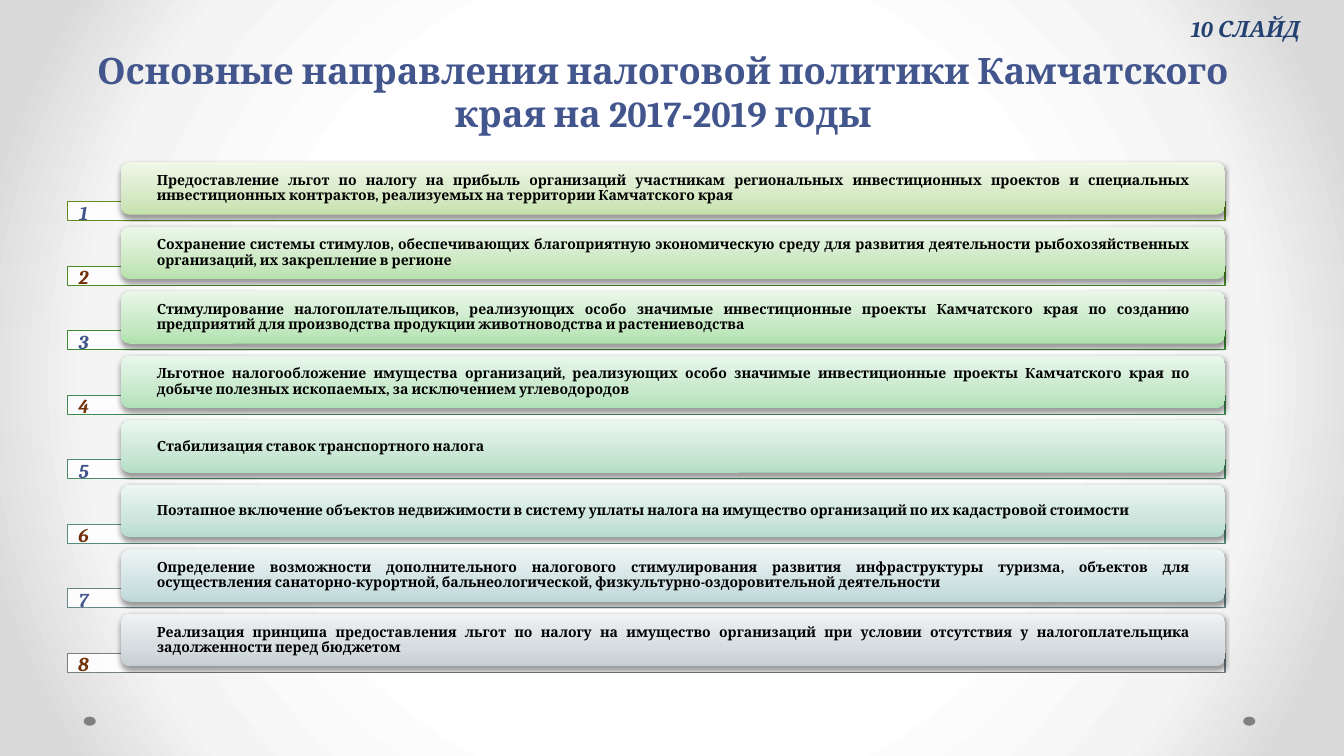
import pptx
import pptx.util
import pptx.dml.color
import pptx.oxml
import pptx.oxml.ns
from pptx.enum.shapes import MSO_SHAPE
from pptx.enum.text import MSO_ANCHOR, PP_ALIGN

FONT = "Cambria"
BLUE, BROWN, NAVY = "42568D", "723008", "234271"
WIDTH, HEIGHT = 13.33, 7.5
ROW_TOP, ROW_PITCH = 1.61, 0.64

# Wording, outline of the bar, gradient of the box from bottom to top
DIRECTIONS = [
    ("Предоставление льгот по налогу на прибыль организаций участникам региональных "
     "инвестиционных проектов и специальных инвестиционных контрактов, реализуемых "
     "на территории Камчатского края",
     "63891F", ("C5E1AB", "D6E9C5", "EFF7E9")),
    ("Сохранение системы стимулов, обеспечивающих благоприятную экономическую среду "
     "для развития деятельности рыбохозяйственных организаций, их закрепление в регионе",
     "4C8B28", ("B7E2AC", "CDE9C5", "ECF7E9")),
    ("Стимулирование налогоплательщиков, реализующих особо значимые инвестиционные "
     "проекты Камчатского края по созданию предприятий для производства продукции "
     "животноводства и растениеводства",
     "3A8D33", ("AFE2AD", "C8E9C6", "E9F7E9")),
    ("Льготное налогообложение имущества организаций, реализующих особо значимые "
     "инвестиционные проекты Камчатского края по добыче полезных ископаемых, "
     "за исключением углеводородов",
     "3E8D4E", ("AFE1B6", "C8E9CC", "E9F7EB")),
    ("Стабилизация ставок транспортного налога",
     "4A8C6A", ("B3DFC4", "CAE7D5", "EAF7EF")),
    ("Поэтапное включение объектов недвижимости в систему уплаты налога на имущество "
     "организаций по их кадастровой стоимости",
     "588B7E", ("B7DCD1", "CDE5DE", "ECF6F3")),
    ("Определение возможности дополнительного налогового стимулирования развития "
     "инфраструктуры туризма, объектов для осуществления санаторно-курортной, "
     "бальнеологической, физкультурно-оздоровительной деятельности",
     "668788", ("BED7D8", "D1E2E3", "EDF4F4")),
    ("Реализация принципа предоставления льгот по налогу на имущество организаций "
     "при условии отсутствия у налогоплательщика задолженности перед бюджетом",
     "758085", ("C5CED2", "D6DCDF", "EFF2F3")),
]


def color(hex_code):
    return pptx.dml.color.RGBColor.from_string(hex_code)


def inches(*lengths):
    return [pptx.util.Inches(length) for length in lengths]


def xml(markup):
    """Parse one element of the drawing namespace."""
    head, mark, tail = markup.partition(" ")
    return pptx.oxml.parse_xml(f"{head} {pptx.oxml.ns.nsdecls('a')}{mark}{tail}")


def set_gradient(fill, owner, stops, direction):
    """Give the fill its stops and its direction element."""
    fill.gradient()
    gradient = next(owner.iter(pptx.oxml.ns.qn("a:gradFill")))
    for part in list(gradient):
        gradient.remove(part)
    marks = "".join(f'<a:gs pos="{share * 1000}"><a:srgbClr val="{tone}"/></a:gs>'
                    for share, tone in stops)
    gradient.append(xml(f"<a:gsLst >{marks}</a:gsLst>"))
    gradient.append(xml(direction))


def write(shape, text, size=10, tone="000000", italic=False, align=PP_ALIGN.CENTER,
          anchor=MSO_ANCHOR.TOP, spacing=None, insets=(0.1, 0.05, 0.1, 0.05)):
    frame = shape.text_frame
    frame.word_wrap = True
    frame.vertical_anchor = anchor
    (frame.margin_left, frame.margin_top,
     frame.margin_right, frame.margin_bottom) = inches(*insets)
    paragraph = frame.paragraphs[0]
    paragraph.alignment = align
    if spacing:
        paragraph.line_spacing = spacing
    run = paragraph.add_run()
    run.text = text
    run.font.name = FONT
    run.font.size = pptx.util.Pt(size)
    run.font.bold = True
    run.font.italic = italic
    run.font.color.rgb = color(tone)


def add_label(slide, place, text, **text_format):
    write(slide.shapes.add_textbox(*inches(*place)), text, **text_format)


def add_plain(slide, kind, place, fill=None, outline=None):
    shape = slide.shapes.add_shape(kind, *inches(*place))
    shape.shadow.inherit = False
    if fill:
        shape.fill.solid()
        shape.fill.fore_color.rgb = color(fill)
    if outline:
        shape.line.color.rgb = color(outline)
        shape.line.width = pptx.util.Pt(0.75)
    else:
        shape.line.fill.background()
    return shape


def add_bar(slide, top, outline):
    bar = add_plain(slide, MSO_SHAPE.RECTANGLE, (0.67, top, 11.48, 0.19),
                    "FFFFFF", outline)
    white = next(bar._element.spPr.iter(pptx.oxml.ns.qn("a:srgbClr")))
    white.append(xml('<a:alpha val="90000"/>'))


def add_direction_box(slide, top, text, tones):
    box = add_plain(slide, MSO_SHAPE.ROUNDED_RECTANGLE, (1.2, top, 10.95, 0.52))
    properties = box._element.spPr
    set_gradient(box.fill, properties, zip((0, 35, 100), tones),
                 '<a:lin ang="16200000" scaled="0"/>')
    effects = properties.find(pptx.oxml.ns.qn("a:effectLst"))
    effects.append(xml(
        f'<a:outerShdw blurRad="{pptx.util.Pt(3.1)}" dist="{pptx.util.Pt(1.6)}" '
        'dir="5400000" rotWithShape="0"><a:srgbClr val="000000">'
        '<a:alpha val="38000"/></a:srgbClr></a:outerShdw>'))
    write(box, text, align=PP_ALIGN.JUSTIFY, anchor=MSO_ANCHOR.MIDDLE,
          spacing=0.9, insets=(0.33, 0, 0.33, 0))


def main():
    deck = pptx.Presentation()
    deck.slide_width, deck.slide_height = inches(WIDTH, HEIGHT)
    slide = deck.slides.add_slide(deck.slide_layouts[5])

    # Background and the two dots at the foot
    set_gradient(slide.background.fill, slide._element,
                 ((50, "FFFFFF"), (76, "F4F4F4"), (92, "DADADA")),
                 '<a:path path="circle"><a:fillToRect l="50000" t="50000" '
                 'r="50000" b="50000"/></a:path>')
    for dot_left in (12.33, 0.83):
        add_plain(slide, MSO_SHAPE.OVAL, (dot_left, 7.11, 0.12, 0.09), "808080")

    # Title
    title = slide.shapes.title
    title.left, title.top, title.width, title.height = inches(0.58, 0.49, 12, 0.9)
    write(title, "Основные направления налоговой политики Камчатского края "
          "на 2017-2019 годы", size=26, tone=BLUE, anchor=MSO_ANCHOR.BOTTOM)

    # Directions, one row each
    for row, (text, outline, tones) in enumerate(DIRECTIONS):
        top = ROW_TOP + row * ROW_PITCH
        add_bar(slide, top + 0.39, outline)
        add_direction_box(slide, top, text, tones)

    # Row numbers
    for row in range(len(DIRECTIONS)):
        add_label(slide, (0.58, ROW_TOP + 0.33 + row * ROW_PITCH, 0.5, 0.34),
                  str(row + 1), size=14, tone=BROWN if row % 2 else BLUE, italic=True)

    # Slide mark in the corner
    add_label(slide, (11.61, 0.1, 1.47, 0.37), "10 СЛАЙД", size=16, tone=NAVY,
              italic=True, align=PP_ALIGN.RIGHT, insets=(0.1, 0.05, 0.19, 0.05))

    deck.save("out.pptx")


if __name__ == "__main__":
    main()
